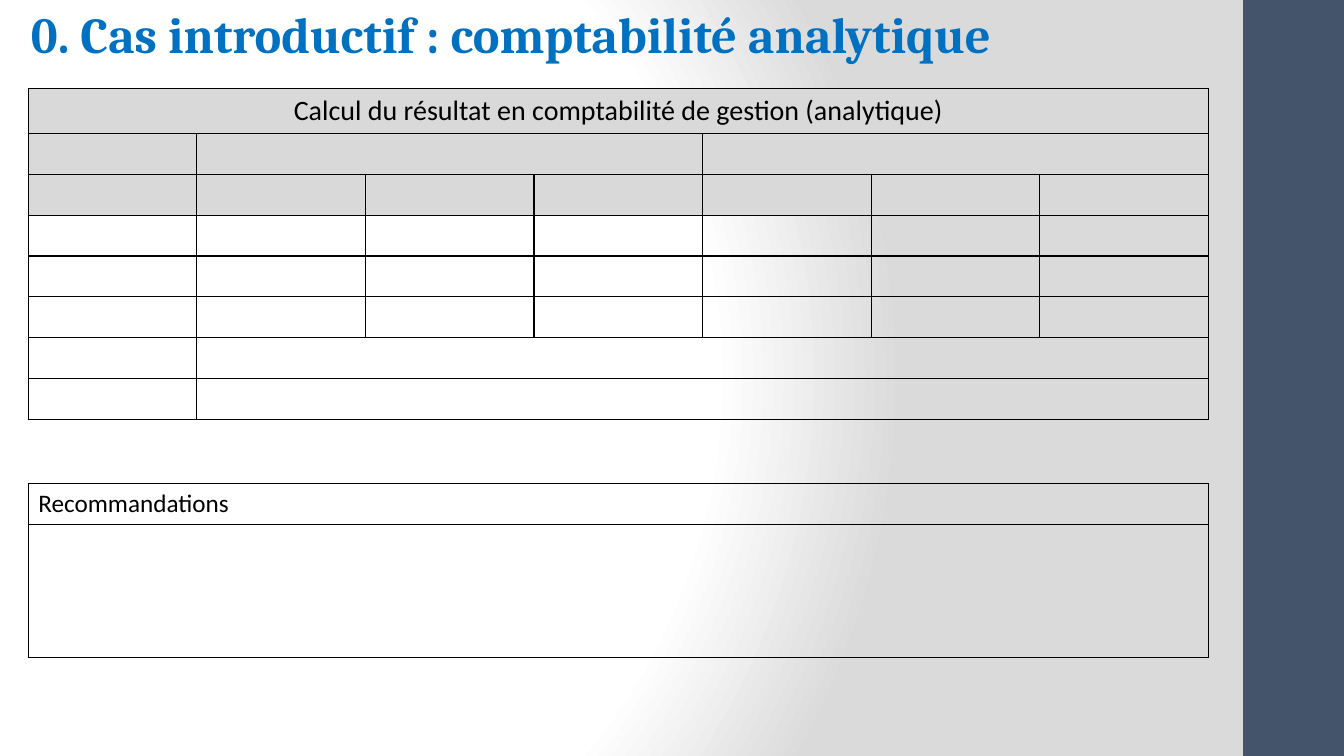
from pptx import Presentation
from pptx import util as u
from pptx.dml.color import RGBColor
from pptx.enum import shapes, text
from pptx.oxml import parse_xml
from pptx.oxml.ns import nsdecls

BLUE = RGBColor(0x00, 0x70, 0xC0)
SLATE = RGBColor(0x44, 0x54, 0x6A)
GREY = RGBColor(0xD9, 0xD9, 0xD9)
BLACK = RGBColor(0, 0, 0)
WHITE = RGBColor(0xFF, 0xFF, 0xFF)
MIST = RGBColor(0xDA, 0xDA, 0xDA)

TABLE_LEFT, TABLE_WIDTH = 20.2, 843


class SlideBuilder:
    """Holds the text styles and the current page."""

    styles = {
        "title": {"name": "Cambria", "size": u.Pt(36), "bold": True, "color": BLUE},
        "heading": {"name": "Calibri", "size": u.Pt(20), "color": BLACK},
        "label": {"name": "Calibri", "size": u.Pt(18), "color": BLACK},
    }

    def __init__(self, page):
        self.page = page

    def add_words(self, frame, words, style, align):
        para = frame.paragraphs[0]
        para.alignment = align
        span = para.add_run()
        span.text = words
        for key, value in self.styles[style].items():
            if key == "color":
                span.font.color.rgb = value
            else:
                setattr(span.font, key, value)

    def background(self, stops):
        self.page.background.fill.solid()
        marks = "".join(
            f'<a:gs pos="{place * 1000}"><a:srgbClr val="{color}"/></a:gs>'
            for place, color in stops)
        gradient = parse_xml(
            f'<a:gradFill {nsdecls("a")} rotWithShape="1"><a:gsLst>{marks}</a:gsLst>'
            '<a:path path="circle"><a:fillToRect l="20000" t="50000" r="100000" b="50000"/>'
            '</a:path></a:gradFill>')
        properties = self.page._element.cSld.bg.bgPr
        properties.replace(properties[0], gradient)

    def band(self, left, top, width, height, color):
        box = self.page.shapes.add_shape(
            shapes.MSO_SHAPE.RECTANGLE, *map(u.Pt, (left, top, width, height)))
        box.shadow.inherit = False
        box.fill.solid()
        box.fill.fore_color.rgb = color
        box.line.fill.background()

    def title(self, words, left, top, width, height):
        box = self.page.shapes.title
        place = {"left": left, "top": top, "width": width, "height": height}
        for key, value in place.items():
            setattr(box, key, u.Pt(value))
        layout = {"margin_left": 0, "margin_top": u.Pt(3.6), "margin_right": 0,
                  "margin_bottom": 0, "word_wrap": True,
                  "auto_size": text.MSO_AUTO_SIZE.NONE,
                  "vertical_anchor": text.MSO_ANCHOR.BOTTOM}
        for key, value in layout.items():
            setattr(box.text_frame, key, value)
        self.add_words(box.text_frame, words, "title", text.PP_ALIGN.CENTER)

    def table(self, top, heights, columns, shaded_rows=0, merges=()):
        grid = self.page.shapes.add_table(
            len(heights), columns, u.Pt(TABLE_LEFT), u.Pt(top),
            u.Pt(TABLE_WIDTH), u.Pt(sum(heights))).table
        grid.first_row = grid.horz_banding = False
        for row, height in zip(grid.rows, heights):
            row.height = u.Pt(height)
        for index, row in enumerate(grid.rows):
            for cell in row.cells:
                if index < shaded_rows:
                    cell.fill.solid()
                    cell.fill.fore_color.rgb = GREY
                else:
                    cell.fill.background()
                self.border(cell)
        for row, first, last in merges:
            grid.cell(row, first).merge(grid.cell(row, last))
        return grid

    def border(self, cell):
        properties = cell._tc.get_or_add_tcPr()
        for index, side in enumerate("LRTB"):
            properties.insert(index, parse_xml(
                f'<a:ln{side} {nsdecls("a")} w="{u.Pt(1)}"><a:solidFill>'
                f'<a:srgbClr val="{BLACK}"/></a:solidFill></a:ln{side}>'))


def main():
    deck = Presentation()
    deck.slide_width, deck.slide_height = u.Pt(960), u.Pt(540)
    builder = SlideBuilder(deck.slides.add_slide(deck.slide_layouts[5]))

    # Backdrop and side band
    builder.background([(0, WHITE), (75, WHITE), (100, MIST)])
    builder.band(888, 0, 72, 540, SLATE)

    # Title
    builder.title("0. Cas introductif : comptabilité analytique", -35.3, -44.6, 800.6, 90)

    # Result table: heading, two header rows, then the rows to fill in
    result = builder.table(
        63.5, [31.8] + [29.2] * 7, 7, shaded_rows=3,
        merges=[(0, 0, 6), (1, 1, 3), (1, 4, 6), (6, 1, 6), (7, 1, 6)])
    heading = result.cell(0, 0)
    heading.vertical_anchor = text.MSO_ANCHOR.MIDDLE
    builder.add_words(heading.text_frame,
                      "Calcul du résultat en comptabilité de gestion (analytique)",
                      "heading", text.PP_ALIGN.CENTER)

    # Recommendations table
    advice = builder.table(345.6, [29.2, 94.8], 1)
    builder.add_words(advice.cell(0, 0).text_frame, "Recommandations", "label",
                      text.PP_ALIGN.LEFT)

    deck.save("out.pptx")


if __name__ == "__main__":
    main()
